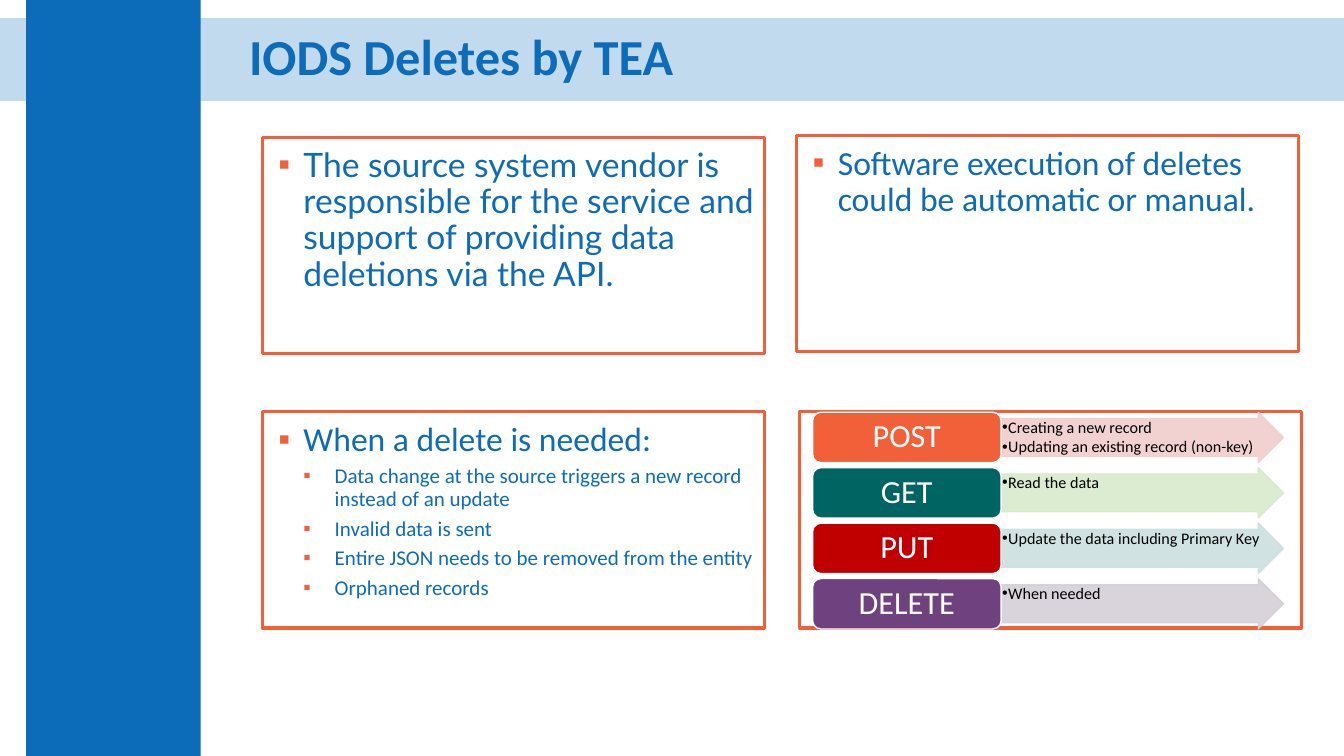
from lxml.etree import SubElement
from pptx import Presentation
from pptx.dml.color import RGBColor
from pptx.enum.shapes import MSO_SHAPE
from pptx.enum.text import MSO_ANCHOR, MSO_AUTO_SIZE, PP_ALIGN
from pptx.oxml.ns import qn
from pptx.util import Inches, Pt

BLUE = "0D6CB9"
ORANGE = "F16038"
WHITE = "FFFFFF"
SQUARE = "▪"

SERVICE = ["The source system vendor is responsible for the service and support "
           "of providing data deletions via the API."]
EXECUTION = ["Software execution of deletes could be automatic or manual."]
REASONS = [
    "When a delete is needed:",
    "Data change at the source triggers a new record instead of an update",
    "Invalid data is sent",
    "Entire JSON needs to be removed from the entity",
    "Orphaned records",
]
METHODS = [
    ("POST", ORANGE, "F1CECD", ["Creating a new record", "Updating an existing record (non-key)"]),
    ("GET", "006462", "D8EACC", ["Read the data"]),
    ("PUT", "C00000", "CDDFE1", ["Update the data including Primary Key"]),
    ("DELETE", "70417F", "D5CFD8", ["When needed"]),
]


def paint(color_format, color, opacity=100):
    color_format.rgb = RGBColor.from_string(color)


def paint_fill(fill, color, opacity=100):
    fill.solid()
    paint(fill.fore_color, color)
    if opacity < 100:
        tint = fill._xPr.find(qn("a:solidFill"))[0]
        SubElement(tint, qn("a:alpha"), val=str(opacity * 1000))


def add_block(page, kind, box, color, line=None, width=1, opacity=100):
    shape = page.shapes.add_shape(kind, *map(Inches, box))
    shape.shadow.inherit = False
    paint_fill(shape.fill, color, opacity)
    if line:
        paint_fill(shape.line.fill, line, opacity)
        shape.line.width = Pt(width)
    else:
        shape.line.fill.background()
    return shape


def place(placeholder, box):
    placeholder.left, placeholder.top, placeholder.width, placeholder.height = map(Inches, box)
    placeholder.element.getparent().append(placeholder.element)


def set_frame(frame, anchor=MSO_ANCHOR.TOP, insets=(0.1, 0.05)):
    frame.word_wrap = True
    frame.auto_size = MSO_AUTO_SIZE.NONE
    frame.vertical_anchor = anchor
    frame.margin_left = frame.margin_right = Inches(insets[0])
    frame.margin_top = frame.margin_bottom = Inches(insets[1])


def add_bullet(para, bullet, indent, hanging, color):
    properties = para._p.get_or_add_pPr()
    properties.set("marL", str(Inches(indent)))
    properties.set("indent", str(-Inches(hanging)))
    bullet_color = SubElement(properties, qn("a:buClr"))
    SubElement(bullet_color, qn("a:srgbClr"), val=color)
    SubElement(properties, qn("a:buFont"), typeface="Arial")
    SubElement(properties, qn("a:buChar"), char=bullet)


def write(frame, text, size, color, font="Calibri", bold=False, align=PP_ALIGN.LEFT,
          before=0, level=0, bullet=None, indent=0, hanging=0, bullet_color=ORANGE):
    first = not frame.text
    para = frame.paragraphs[0] if first else frame.add_paragraph()
    para.level = level
    para.alignment = align
    para.line_spacing = 0.9
    para.space_before = Pt(0 if first else before)
    para.space_after = Pt(0)
    if bullet:
        add_bullet(para, bullet, indent, hanging, bullet_color)
    span = para.add_run()
    span.text = text
    span.font.name = font
    span.font.size = Pt(size)
    span.font.bold = bold
    paint(span.font.color, color)


def draw_header(page, box):
    left, top, width, height = box
    add_block(page, MSO_SHAPE.RECTANGLE, box, BLUE, opacity=25)
    add_block(page, MSO_SHAPE.RECTANGLE, (left + 0.26, 0, 1.73, 7.5), BLUE)
    title = page.shapes.title
    place(title, (left + 2.37, top, width - 2.4, height))
    set_frame(title.text_frame, MSO_ANCHOR.MIDDLE)
    write(title.text_frame, "IODS Deletes by TEA", 36, BLUE, bold=True)


def draw_panel(page, box):
    add_block(page, MSO_SHAPE.RECTANGLE, box, WHITE, ORANGE, 2.25)


def draw_list(page, box, placeholder, lines, font="Calibri"):
    left, top, width, height = box
    draw_panel(page, box)
    place(placeholder, (left + 0.06, top + 0.06, width + 0.04, height - 0.13))
    frame = placeholder.text_frame
    set_frame(frame)
    write(frame, lines[0], 24, BLUE, font, bullet=SQUARE, indent=0.25, hanging=0.25)
    for line in lines[1:]:
        write(frame, line, 15, BLUE, font, before=5, level=1,
              bullet=SQUARE, indent=0.56, hanging=0.31)


def draw_method(page, box, method):
    left, top, width, height = box
    name, color, tint, uses = method
    label_width = 1.87
    arrow_left = left + label_width
    arrow_width = width - label_width
    add_block(page, MSO_SHAPE.RIGHT_ARROW, (arrow_left, top, arrow_width, height),
              tint, tint, opacity=90).adjustments[0] = 0.75
    note = page.shapes.add_textbox(*map(Inches, (arrow_left, top + 0.06, arrow_width - 0.19, 0.37)))
    set_frame(note.text_frame, insets=(0.01, 0.01))
    for use in uses:
        write(note.text_frame, use, 11.5, "000000", before=1.7,
              bullet="•", indent=0.06, hanging=0.06, bullet_color="000000")
    label = add_block(page, MSO_SHAPE.ROUNDED_RECTANGLE, (left, top, label_width, height), color, WHITE)
    set_frame(label.text_frame, MSO_ANCHOR.MIDDLE)
    write(label.text_frame, name, 23, WHITE, align=PP_ALIGN.CENTER)


def draw_methods(page, box):
    left, top, width, height = box
    draw_panel(page, box)
    row_height = 0.5
    step = (height - row_height) / (len(METHODS) - 1)
    for row, method in enumerate(METHODS):
        draw_method(page, (left + 0.13, top + 0.01 + row * step, width - 0.31, row_height), method)


def main():
    deck = Presentation()
    deck.slide_width, deck.slide_height = Inches(13.33), Inches(7.5)
    page = deck.slides.add_slide(deck.slide_layouts[4])
    bodies = {item.placeholder_format.idx: item for item in page.placeholders}
    draw_header(page, (0, 0.18, 13.33, 0.82))
    draw_list(page, (2.6, 1.36, 4.98, 2.15), bodies[1], SERVICE, "Lato")
    draw_list(page, (2.6, 4.08, 4.98, 2.15), bodies[2], REASONS)
    draw_list(page, (7.9, 1.34, 4.98, 2.15), bodies[4], EXECUTION)
    draw_methods(page, (7.93, 4.08, 4.98, 2.15))
    unused = bodies[3].element
    unused.getparent().remove(unused)
    deck.save("out.pptx")


if __name__ == "__main__":
    main()
